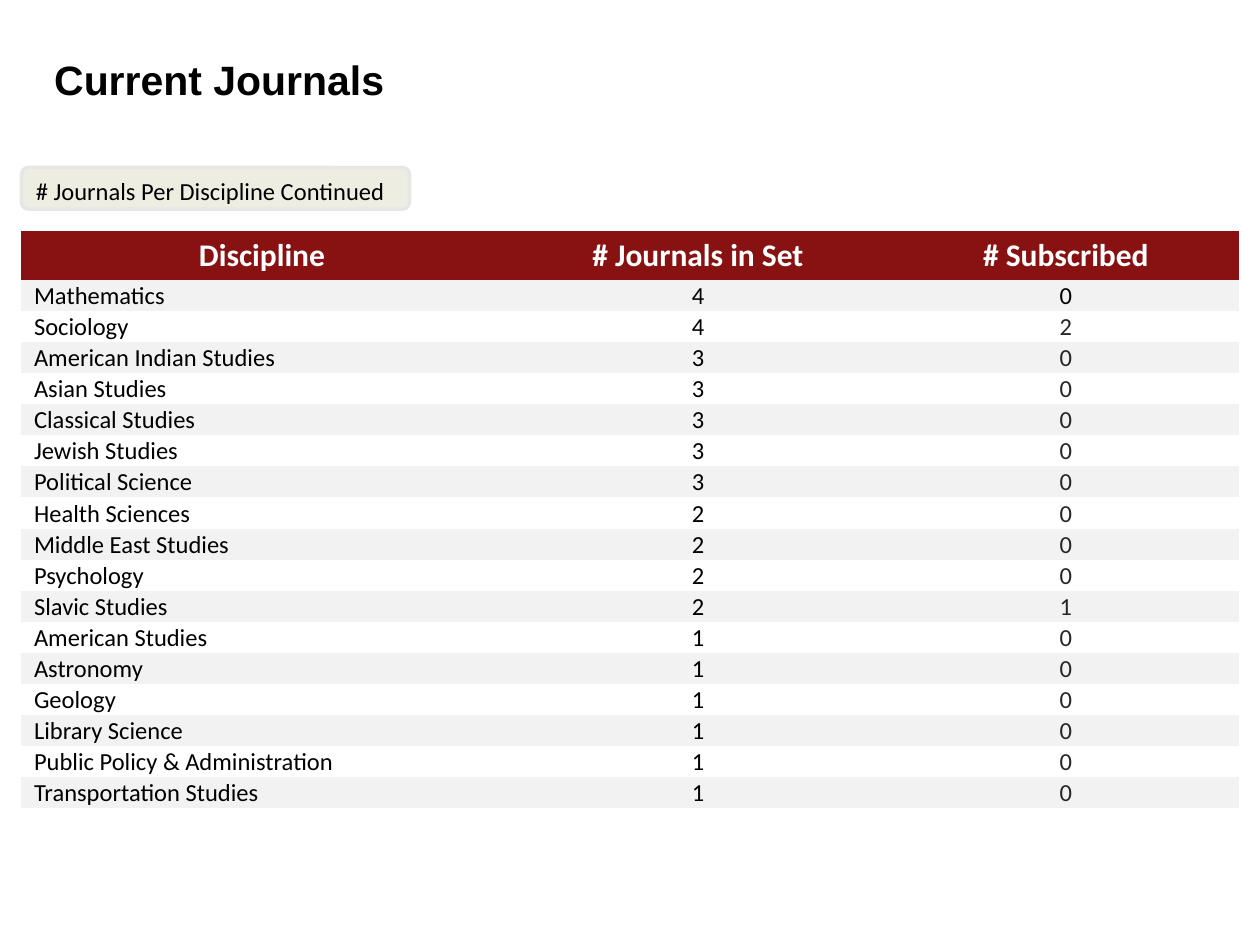
from dataclasses import dataclass

import pptx
import pptx.dml.color
import pptx.enum.shapes
import pptx.enum.text
import pptx.oxml.ns
import pptx.util

Inches = pptx.util.Inches
Align = pptx.enum.text.PP_ALIGN
Anchor = pptx.enum.text.MSO_ANCHOR


@dataclass(frozen=True)
class Theme:
    title_font: str = "Arial"
    body_font: str = "Calibri"
    title_size: float = 23.4
    header_size: float = 18
    body_size: float = 14
    black: str = "000000"
    white: str = "FFFFFF"
    soft_black: str = "272727"
    header_fill: str = "881212"
    band_fill: str = "F2F2F2"
    label_fill: str = "EEEDE2"
    label_line: str = "E6E6E6"


@dataclass(frozen=True)
class Discipline:
    name: str
    journals: int
    subscribed: int = 0


THEME = Theme()
NO_STYLE_TABLE = "{2D5ABB26-0587-4C30-8999-92F81FD0307C}"
HEADERS = ("Discipline", "# Journals in Set", "# Subscribed")
COLUMN_WIDTHS = (3.82, 3.1, 2.74)
HEADER_HEIGHT = 0.39
ROW_HEIGHT = 0.18
DISCIPLINES = (
    Discipline("Mathematics", 4),
    Discipline("Sociology", 4, 2),
    Discipline("American Indian Studies", 3),
    Discipline("Asian Studies", 3),
    Discipline("Classical Studies", 3),
    Discipline("Jewish Studies", 3),
    Discipline("Political Science", 3),
    Discipline("Health Sciences", 2),
    Discipline("Middle East Studies", 2),
    Discipline("Psychology", 2),
    Discipline("Slavic Studies", 2, 1),
    Discipline("American Studies", 1),
    Discipline("Astronomy", 1),
    Discipline("Geology", 1),
    Discipline("Library Science", 1),
    Discipline("Public Policy & Administration", 1),
    Discipline("Transportation Studies", 1),
)


def rgb(color: str) -> pptx.dml.color.RGBColor:
    return pptx.dml.color.RGBColor.from_string(color)


def write_text(frame, text: str, *, size: float = THEME.body_size,
               font: str = THEME.body_font, color: str = THEME.black,
               bold: bool = False, align=Align.LEFT) -> None:
    para = frame.paragraphs[0]
    para.alignment = align
    span = para.add_run()
    span.text = text
    span.font.name = font
    span.font.size = pptx.util.Pt(size)
    span.font.bold = bold
    span.font.color.rgb = rgb(color)


def add_title(page, text: str) -> None:
    title = page.shapes.title
    title.left, title.top = Inches(0.33), Inches(0.25)
    title.width, title.height = Inches(7.5), Inches(0.75)
    frame = title.text_frame
    frame.word_wrap = True
    frame.auto_size = pptx.enum.text.MSO_AUTO_SIZE.NONE
    frame.vertical_anchor = Anchor.MIDDLE
    write_text(frame, text, size=THEME.title_size, font=THEME.title_font, bold=True)


def add_label(page, text: str) -> None:
    box = page.shapes.add_shape(
        pptx.enum.shapes.MSO_SHAPE.ROUNDED_RECTANGLE,
        Inches(0.17), Inches(1.33), Inches(3.08), Inches(0.33))
    box.shadow.inherit = False
    box.fill.solid()
    box.fill.fore_color.rgb = rgb(THEME.label_fill)
    box.line.color.rgb = rgb(THEME.label_line)
    box.line.width = pptx.util.Pt(2)
    box.text_frame.word_wrap = True
    box.text_frame.vertical_anchor = Anchor.TOP
    write_text(box.text_frame, text)


def fill_cell(cell, text: str, fill: str, *, left_margin: float = 0.01, **text_format) -> None:
    cell.fill.solid()
    cell.fill.fore_color.rgb = rgb(fill)
    cell.vertical_anchor = Anchor.MIDDLE
    cell.margin_left = Inches(left_margin)
    cell.margin_top = cell.margin_right = Inches(0.01)
    cell.margin_bottom = 0
    write_text(cell.text_frame, text, **text_format)


def add_journal_table(page) -> None:
    holder = page.shapes.add_table(
        len(DISCIPLINES) + 1, len(HEADERS),
        Inches(0.17), Inches(1.83), Inches(9.67), Inches(4.5))
    table = holder.table
    table.horz_banding = False
    style = holder.element.find(".//" + pptx.oxml.ns.qn("a:tableStyleId"))
    style.text = NO_STYLE_TABLE

    for column, width in zip(table.columns, COLUMN_WIDTHS):
        column.width = Inches(width)
    for index, row in enumerate(table.rows):
        row.height = Inches(ROW_HEIGHT if index else HEADER_HEIGHT)
    holder.height = Inches(4.5)

    for column, header in enumerate(HEADERS):
        fill_cell(table.cell(0, column), header, THEME.header_fill,
                  size=THEME.header_size, color=THEME.white, bold=True,
                  align=Align.CENTER)
    for row, entry in enumerate(DISCIPLINES, start=1):
        fill = THEME.band_fill if row % 2 else THEME.white
        count_color = THEME.black if row == 1 else THEME.soft_black
        fill_cell(table.cell(row, 0), entry.name, fill, left_margin=0.1)
        fill_cell(table.cell(row, 1), str(entry.journals), fill, align=Align.CENTER)
        fill_cell(table.cell(row, 2), str(entry.subscribed), fill,
                  color=count_color, align=Align.CENTER)


def main() -> None:
    deck = pptx.Presentation()
    deck.slide_width, deck.slide_height = Inches(10), Inches(7.5)
    page = deck.slides.add_slide(deck.slide_layouts.get_by_name("Title Only"))
    add_title(page, "Current Journals")
    add_journal_table(page)
    add_label(page, "# Journals Per Discipline Continued")
    deck.save("out.pptx")


if __name__ == "__main__":
    main()
